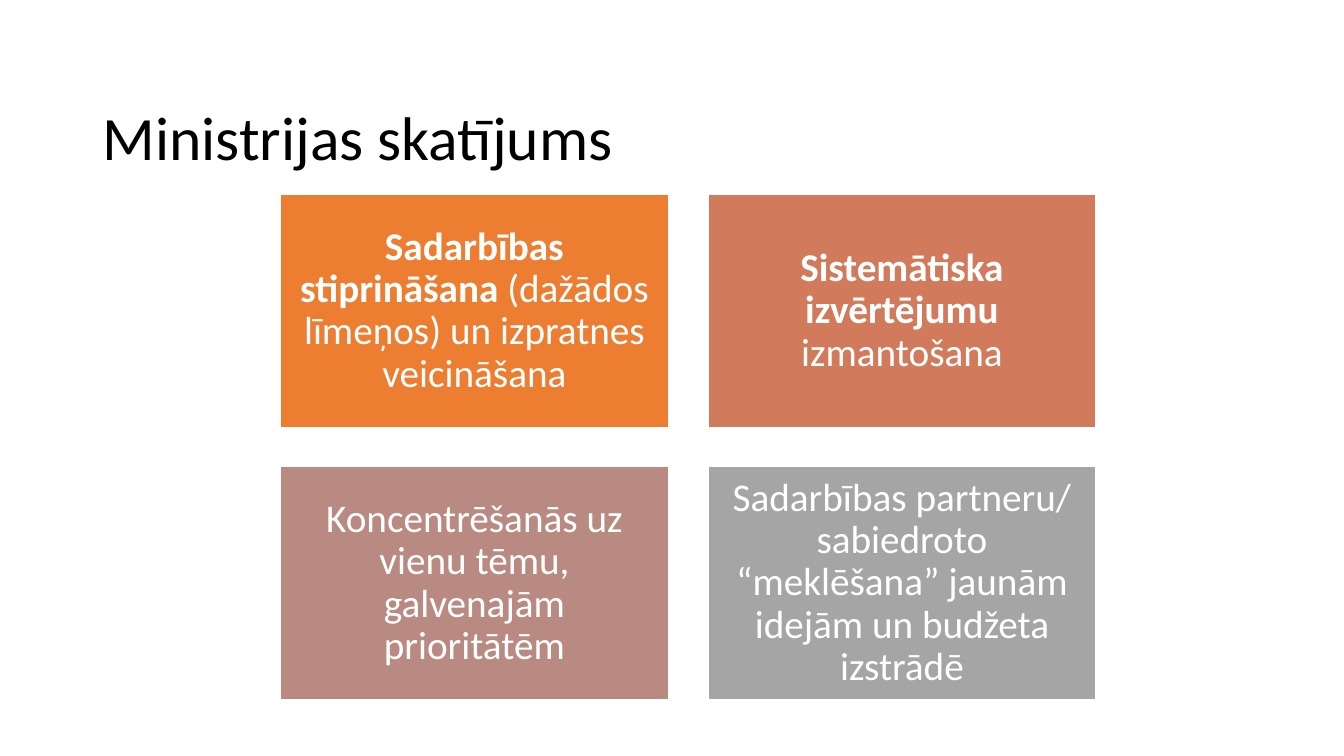
from pptx import Presentation
from pptx.dml.color import RGBColor
from pptx.enum.shapes import MSO_SHAPE
from pptx.enum.text import MSO_ANCHOR, PP_ALIGN
from pptx.util import Inches, Pt

RECT = MSO_SHAPE.RECTANGLE
MIDDLE = MSO_ANCHOR.MIDDLE
LEFT, CENTER = PP_ALIGN.LEFT, PP_ALIGN.CENTER

BLACK = RGBColor(0x00, 0x00, 0x00)
WHITE = RGBColor(0xFF, 0xFF, 0xFF)
ORANGE = RGBColor(0xED, 0x7D, 0x31)
CORAL = RGBColor(0xD1, 0x7B, 0x5C)
ROSE = RGBColor(0xB9, 0x8A, 0x82)
GRAY = RGBColor(0xA5, 0xA5, 0xA5)

# Each card: fill, bold lead, plain text
CARDS = [
    (ORANGE, "Sadarbības stiprināšana ",
     "(dažādos līmeņos) un izpratnes veicināšana"),
    (CORAL, "Sistemātiska izvērtējumu ", "izmantošana"),
    (ROSE, "", "Koncentrēšanās uz vienu tēmu, galvenajām prioritātēm"),
    (GRAY, "", "Sadarbības partneru/ sabiedroto “meklēšana” "
               "jaunām idejām un budžeta izstrādē"),
]


class Canvas:
    font = "Calibri"
    spacing = 0.9

    def __init__(self, slide):
        self.slide = slide

    def label(self, frame, parts, size, color, align):
        """Fill a frame with one paragraph of (text, bold) parts."""
        frame.word_wrap = True
        frame.vertical_anchor = MIDDLE
        para = frame.paragraphs[0]
        para.alignment = align
        para.line_spacing = self.spacing
        para.font.name = self.font
        para.font.size = Pt(size)
        para.font.color.rgb = color
        for text, bold in parts:
            if text:
                run = para.add_run()
                run.text = text
                if bold:
                    run.font.bold = True

    def title(self, text, left, top, width, height):
        box = self.slide.shapes.add_textbox(
            Inches(left), Inches(top), Inches(width), Inches(height))
        self.label(box.text_frame, [(text, False)], 44, BLACK, LEFT)

    def card(self, fill, lead, text, left, top, width, height):
        card = self.slide.shapes.add_shape(
            RECT, Inches(left), Inches(top), Inches(width), Inches(height))
        card.shadow.inherit = False
        card.fill.solid()
        card.fill.fore_color.rgb = fill
        card.line.color.rgb = WHITE
        card.line.width = Pt(1)
        frame = card.text_frame
        frame.margin_left = frame.margin_right = Inches(0.12)
        frame.margin_top = frame.margin_bottom = Inches(0.12)
        self.label(frame, [(lead, True), (text, False)], 28, WHITE, CENTER)


def main():
    deck = Presentation()
    deck.slide_width = Inches(13.33)
    deck.slide_height = Inches(7.5)
    canvas = Canvas(deck.slides.add_slide(deck.slide_layouts[6]))

    # Heading
    canvas.title("Ministrijas skatījums", 0.92, 0.4, 5.74, 1.98)

    # Two by two grid of cards
    width, height, gap = 3.85, 2.31, 0.39
    for i, (fill, lead, text) in enumerate(CARDS):
        row, col = divmod(i, 2)
        canvas.card(fill, lead, text, 2.78 + col * (width + gap),
                    1.93 + row * (height + gap), width, height)

    deck.save("out.pptx")


if __name__ == "__main__":
    main()
